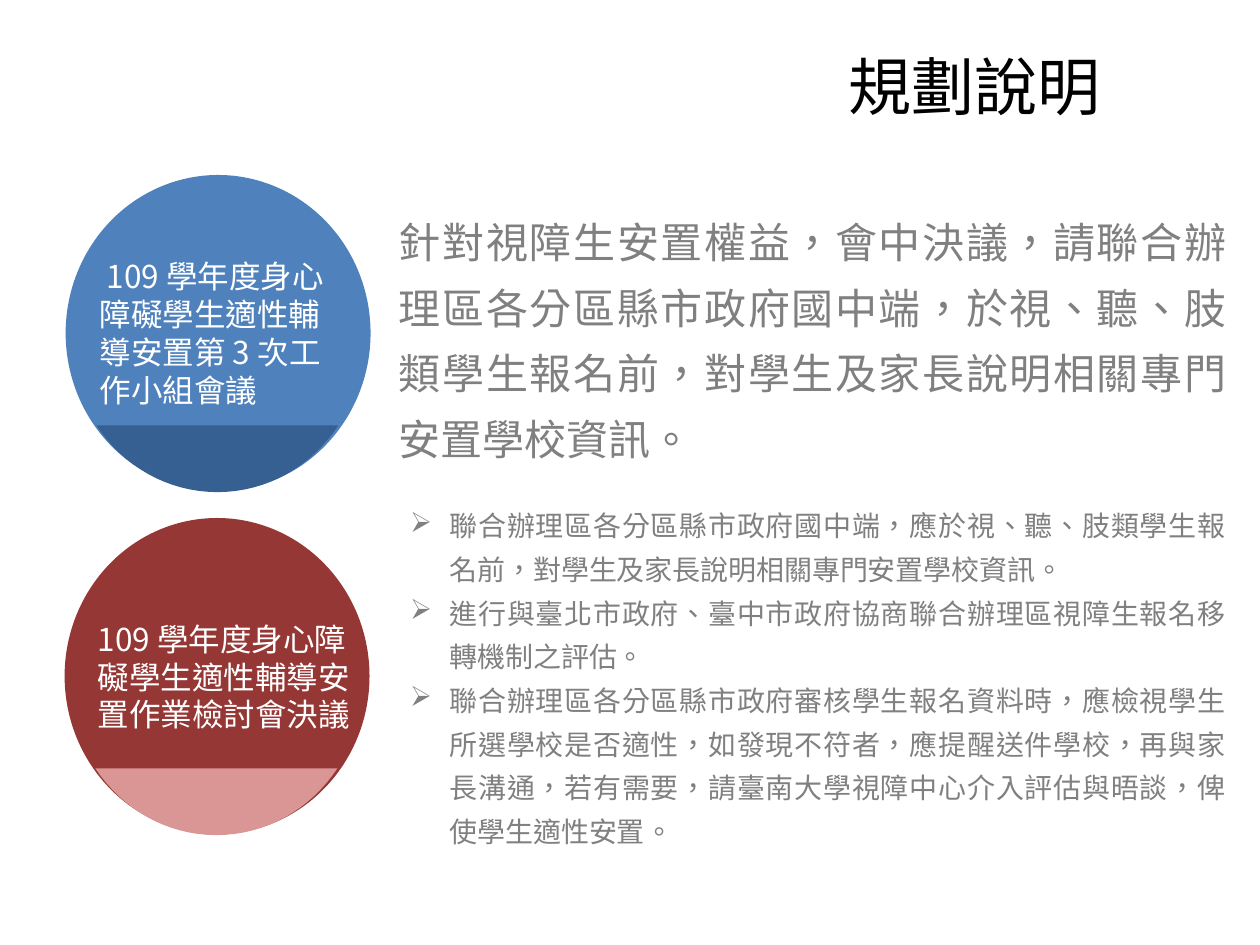
from dataclasses import dataclass

from lxml.etree import SubElement
from pptx import Presentation
from pptx.dml.color import RGBColor
from pptx.enum.lang import MSO_LANGUAGE_ID
from pptx.enum.shapes import MSO_SHAPE
from pptx.enum.text import MSO_ANCHOR, MSO_AUTO_SIZE, PP_ALIGN
from pptx.oxml.ns import qn
from pptx.util import Pt


@dataclass(frozen=True)
class Theme:
    font: str = "Noto Sans CJK SC"
    stop_font: str = "Noto Sans CJK TC"
    black: str = "000000"
    white: str = "FFFFFF"
    grey: str = "808080"
    blue: str = "4F81BD"
    dark_blue: str = "376092"
    red: str = "953735"
    pink: str = "D99694"
    title_size: int = 36
    lead_size: int = 24
    label_size: int = 18
    point_size: int = 16


THEME = Theme()
DISC_SIZE = (174.24, 180.72)
CAP_WIDTH, CAP_HEIGHT = 138.24, 38.16
CAP_OFFSET = (17.6, 143.1)

LEAD = ("針對視障生安置權益，會中決議，請聯合辦理區各分區縣市政府國中端，"
        "於視、聽、肢類學生報名前，對學生及家長說明相關專門安置學校資訊。")
POINTS = [
    "聯合辦理區各分區縣市政府國中端，應於視、聽、肢類學生報名前，對學生及家長說明相關專門安置學校資訊。",
    "進行與臺北市政府、臺中市政府協商聯合辦理區視障生報名移轉機制之評估。",
    "聯合辦理區各分區縣市政府審核學生報名資料時，應檢視學生所選學校是否適性，如發現不符者，"
    "應提醒送件學校，再與家長溝通，若有需要，請臺南大學視障中心介入評估與晤談，俾使學生適性安置",
]


def set_typeface(font, typeface):
    """Name the typeface for both Latin and East Asian text."""
    font.name = typeface
    SubElement(font._element, qn("a:ea")).set("typeface", typeface)


def format_paragraph(paragraph, size, color, align=PP_ALIGN.LEFT, spacing=None):
    paragraph.alignment = align
    if spacing:
        paragraph.line_spacing = spacing
    font = paragraph.font
    font.size = Pt(size)
    font.color.rgb = RGBColor.from_string(color)
    font.language_id = MSO_LANGUAGE_ID.TRADITIONAL_CHINESE
    set_typeface(font, THEME.font)


def add_bullet(paragraph, indent):
    properties = paragraph._p.get_or_add_pPr()
    properties.set("marL", str(Pt(indent)))
    properties.set("indent", str(-Pt(indent)))
    SubElement(properties, qn("a:buChar")).set("char", "➢")


def add_text_frame(slide, box, anchor=MSO_ANCHOR.TOP):
    frame = slide.shapes.add_textbox(*map(Pt, box)).text_frame
    frame.word_wrap = True
    frame.auto_size = MSO_AUTO_SIZE.NONE
    frame.vertical_anchor = anchor
    frame.margin_left = frame.margin_right = Pt(7.6)
    frame.margin_top = frame.margin_bottom = Pt(3.6)
    return frame


def paint(shape, color):
    shape.shadow.inherit = False
    shape.fill.solid()
    shape.fill.fore_color.rgb = RGBColor.from_string(color)
    shape.line.fill.background()


def cap_outline(steps=16):
    """Points along the cap's curved edge, from its right to its left corner."""
    half = CAP_WIDTH / 2
    curve = [(half, 0), (54, 23.04), (28.8, CAP_HEIGHT), (0, CAP_HEIGHT)]
    right = []
    for step in range(steps + 1):
        t = step / steps
        weights = ((1 - t) ** 3, 3 * t * (1 - t) ** 2, 3 * t * t * (1 - t), t ** 3)
        right.append(tuple(sum(w * point[axis] for w, point in zip(weights, curve))
                           for axis in (0, 1)))
    left = [(-x, y) for x, y in reversed(right[:-1])]
    return [(half + x, y) for x, y in right + left]


def add_meeting(slide, left, top, disc_color, cap_color, label_box, label):
    disc = slide.shapes.add_shape(MSO_SHAPE.OVAL, Pt(left), Pt(top), *map(Pt, DISC_SIZE))
    paint(disc, disc_color)

    cap_left, cap_top = left + CAP_OFFSET[0], top + CAP_OFFSET[1]
    builder = slide.shapes.build_freeform(Pt(cap_left), Pt(cap_top))
    builder.add_line_segments([(Pt(cap_left + x), Pt(cap_top + y)) for x, y in cap_outline()])
    paint(builder.convert_to_shape(), cap_color)

    frame = add_text_frame(slide, label_box, MSO_ANCHOR.MIDDLE)
    frame.text = label
    format_paragraph(frame.paragraphs[0], THEME.label_size, THEME.white)


def add_title(slide, text):
    title = slide.shapes.title
    title.left, title.top, title.width, title.height = map(Pt, (399.6, 15.1, 314.6, 67))
    title.text_frame.text = text
    title.text_frame.vertical_anchor = MSO_ANCHOR.MIDDLE
    format_paragraph(title.text_frame.paragraphs[0], THEME.title_size, THEME.black,
                     PP_ALIGN.CENTER)


def add_lead(slide):
    frame = add_text_frame(slide, (220.3, 111.6, 488.2, 159.1))
    frame.text = LEAD
    format_paragraph(frame.paragraphs[0], THEME.lead_size, THEME.grey, PP_ALIGN.JUSTIFY, 1.3)


def add_points(slide):
    frame = add_text_frame(slide, (226.8, 281.5, 481.7, 209.5))
    frame.text = "\n".join(POINTS)
    for paragraph in frame.paragraphs:
        add_bullet(paragraph, 22.5)
        format_paragraph(paragraph, THEME.point_size, THEME.grey, PP_ALIGN.JUSTIFY, 1.3)
    # The closing full stop has its own typeface
    stop = frame.paragraphs[-1].add_run()
    stop.text = "。"
    set_typeface(stop.font, THEME.stop_font)


def main():
    deck = Presentation()
    deck.slide_width, deck.slide_height = Pt(720), Pt(540)
    slide = deck.slides.add_slide(deck.slide_layouts[5])

    add_title(slide, "規劃說明")
    # Meetings on the left
    add_meeting(slide, 36.9, 296, THEME.red, THEME.pink, (48.2, 349.9, 172.8, 73.4),
                "109 學年度身心障礙學生適性輔導安置作業檢討會決議")
    add_meeting(slide, 37.5, 100, THEME.blue, THEME.dark_blue, (49.5, 142.6, 149.8, 95),
                " 109 學年度身心障礙學生適性輔導安置第 3 次工作小組會議")
    # Decisions on the right
    add_points(slide)
    add_lead(slide)

    deck.save("out.pptx")


if __name__ == "__main__":
    main()
